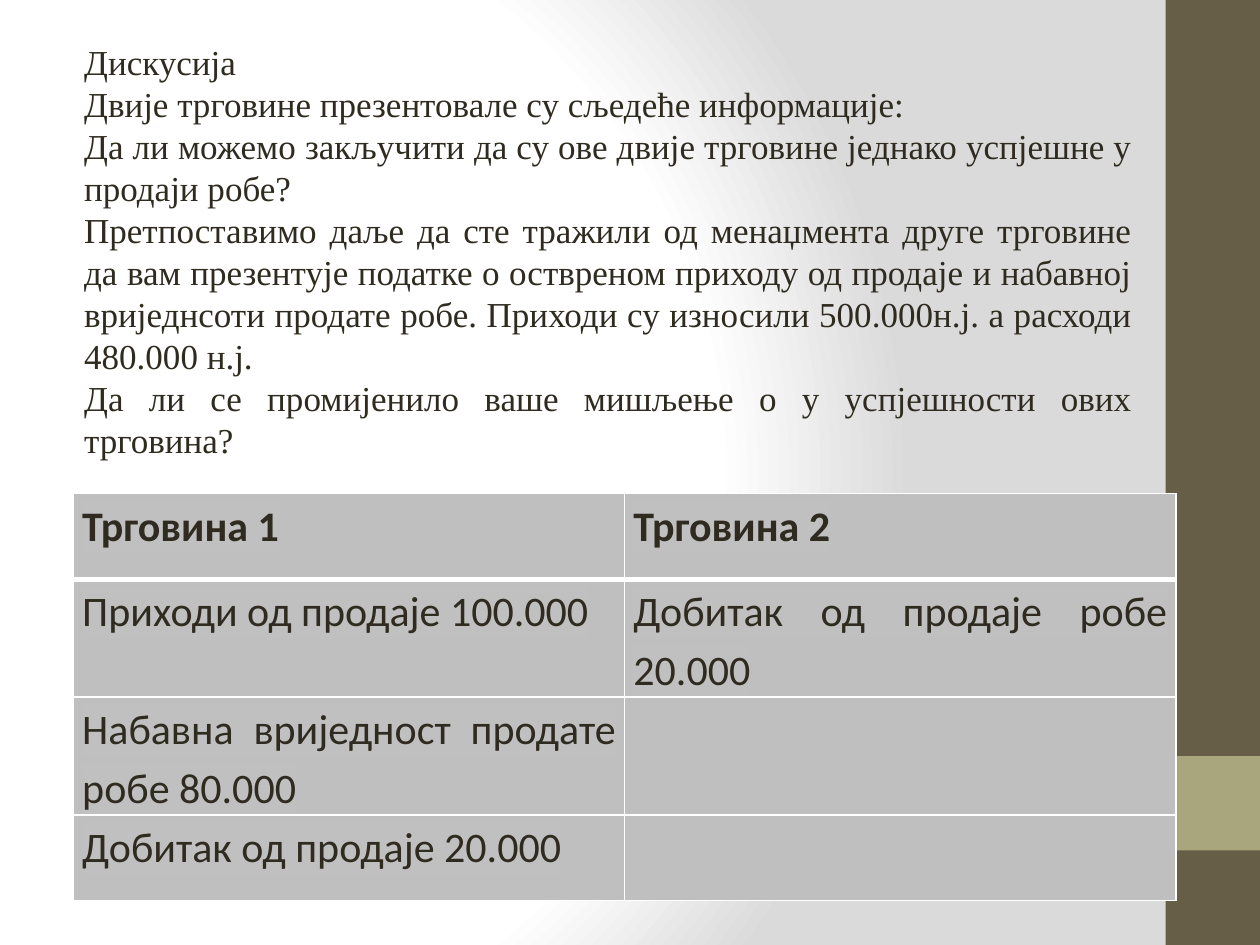
from lxml import etree
from pptx import Presentation
from pptx.dml.color import RGBColor
from pptx.enum.shapes import MSO_SHAPE
from pptx.enum.text import MSO_ANCHOR, PP_ALIGN
from pptx.oxml import parse_xml
from pptx.oxml.ns import qn
from pptx.util import Pt

RECT = MSO_SHAPE.RECTANGLE
MIDDLE = MSO_ANCHOR.MIDDLE
JUSTIFY = PP_ALIGN.JUSTIFY
BLANK = 6

COLORS = {
    "text": "2F2B20",
    "band": "675E47",
    "accent": "A9A57C",
    "cell": "BFBFBF",
    "highlight": "C0C0C0",
    "white": "FFFFFF",
    "shade": "DADADA",
}

DISCUSSION = [
    "Дискусија",
    "Двије трговине презентовале су сљедеће информације:",
    "Да ли можемо закључити да су ове двије трговине једнако успјешне у продаји робе?",
    "Претпоставимо даље да сте тражили од менаџмента друге трговине да вам презентује "
    "податке о оствреном приходу од продаје и набавној вриједнсоти продате робе. "
    "Приходи су износили 500.000н.ј. а расходи 480.000 н.ј. ",
    "Да ли се промијенило ваше мишљење о у успјешности ових трговина?",
]

STORES = [
    ["Трговина 1", "Трговина 2"],
    ["Приходи од продаје 100.000", "Добитак од продаје робе 20.000"],
    ["Набавна вриједност продате робе 80.000", ""],
    ["Добитак од продаје 20.000", ""],
]


class SlideBuilder:
    def __init__(self, s):
        self.s = s
        self.body_font, self.body_size = "Times New Roman", 20
        self.table_font, self.table_size = "Calibri", 24

    def color(self, name):
        return RGBColor.from_string(COLORS[name])

    def background(self, stops):
        self.s.background.fill.solid()
        bg = self.s.background.fill._xPr
        gs = "".join(
            f'<a:gs pos="{pos * 1000}"><a:srgbClr val="{COLORS[name]}"/></a:gs>'
            for pos, name in stops
        )
        grad = parse_xml(
            '<a:gradFill xmlns:a="http://schemas.openxmlformats.org/drawingml/2006/main" '
            f'rotWithShape="1"><a:gsLst>{gs}</a:gsLst><a:path path="circle">'
            '<a:fillToRect l="20000" t="50000" r="100000" b="50000"/></a:path></a:gradFill>'
        )
        bg.replace(bg.find(qn("a:solidFill")), grad)

    def rect(self, x, y, w, h, fill):
        sp = self.s.shapes.add_shape(RECT, Pt(x), Pt(y), Pt(w), Pt(h))
        sp.shadow.inherit = False
        sp.fill.solid()
        sp.fill.fore_color.rgb = self.color(fill)
        sp.line.fill.background()

    def run(self, p, text, font, size, bold=False):
        p.alignment = JUSTIFY
        r = p.add_run()
        r.text = text
        r.font.size = Pt(size)
        r.font.bold = bold
        r.font.color.rgb = self.color("text")
        r.font.name = font
        return r

    def text(self, x, y, w, h, paragraphs):
        tf = self.s.shapes.add_textbox(Pt(x), Pt(y), Pt(w), Pt(h)).text_frame
        tf.word_wrap = True
        tf.vertical_anchor = MIDDLE
        for i, text in enumerate(paragraphs):
            p = tf.add_paragraph() if i else tf.paragraphs[0]
            self.run(p, text, self.body_font, self.body_size)

    def highlight(self, r):
        mark = etree.Element(qn("a:highlight"))
        etree.SubElement(mark, qn("a:srgbClr"), val=COLORS["highlight"])
        r.font._element.find(qn("a:solidFill")).addnext(mark)

    def borders(self, cell, widths):
        tcPr = cell._tc.get_or_add_tcPr()
        for side, width in widths.items():
            ln = etree.SubElement(tcPr, qn(f"a:ln{side}"), w=str(Pt(width)))
            fill = etree.SubElement(ln, qn("a:solidFill"))
            etree.SubElement(fill, qn("a:srgbClr"), val=COLORS["white"])

    def table(self, x, y, w, row_h, rows):
        n, m = len(rows), len(rows[0])
        tbl = self.s.shapes.add_table(n, m, Pt(x), Pt(y), Pt(w), Pt(row_h * n)).table
        tbl.horz_banding = False
        for i, row in enumerate(rows):
            for j, text in enumerate(row):
                cell = tbl.cell(i, j)
                cell.margin_left = cell.margin_right = Pt(5)
                cell.margin_top = cell.margin_bottom = 0
                self.borders(cell, {"L": 1, "R": 1, "T": 3 if i == 1 else 1, "B": 3 if i == 0 else 1})
                cell.fill.solid()
                cell.fill.fore_color.rgb = self.color("cell")
                if text:
                    p = cell.text_frame.paragraphs[0]
                    p.line_spacing = 1.15
                    self.highlight(self.run(p, text, self.table_font, self.table_size, i == 0))


def main():
    prs = Presentation()
    prs.slide_width, prs.slide_height = Pt(720), Pt(540)
    b = SlideBuilder(prs.slides.add_slide(prs.slide_layouts[BLANK]))
    b.background([(0, "white"), (75, "white"), (100, "shade")])
    b.rect(666, 0, 54, 540, "band")
    b.rect(666, 432, 54, 54, "accent")
    b.table(42, 282, 630, 49, STORES)
    b.text(41, 18, 613, 250, DISCUSSION)
    prs.save("out.pptx")


if __name__ == "__main__":
    main()
